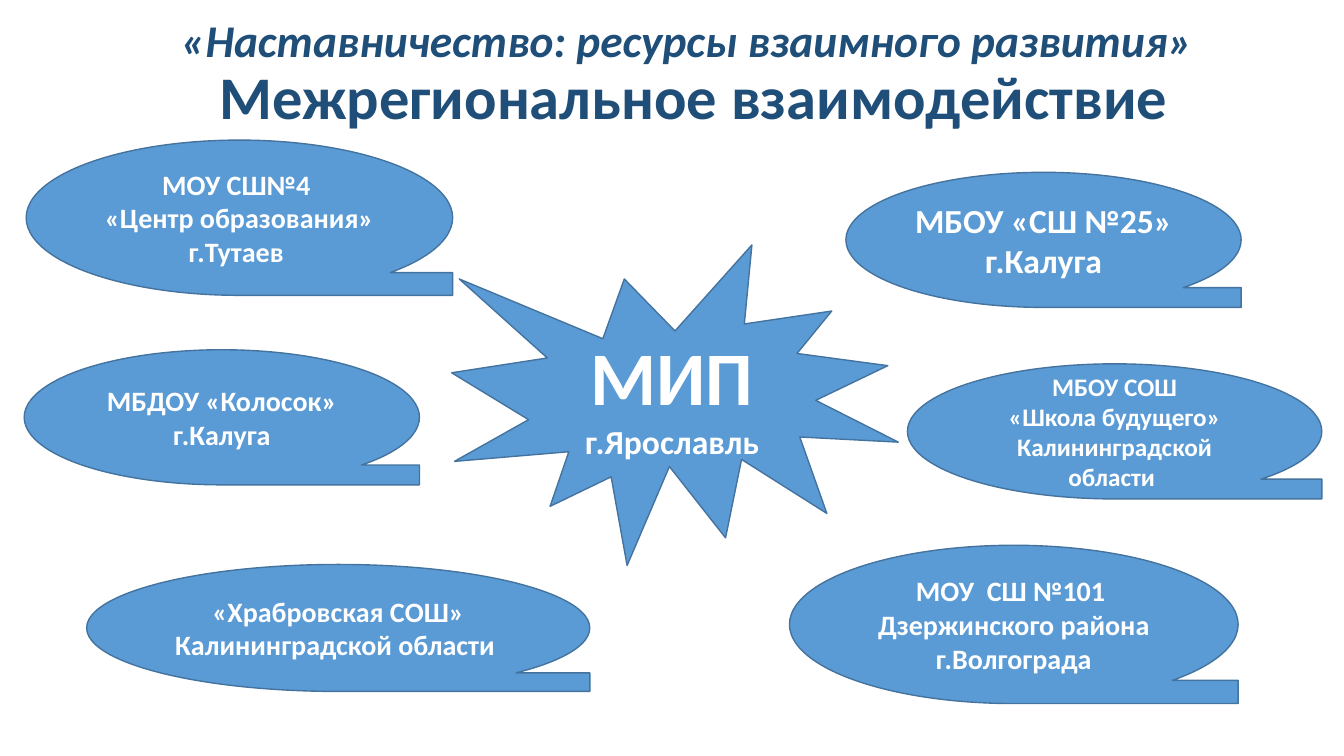
from dataclasses import dataclass

from pptx import Presentation
from pptx import util as u
from pptx.dml.color import RGBColor
from pptx.enum import shapes, text


@dataclass(frozen=True)
class Theme:
    font: str = "Calibri"
    title: str = "1F4E79"
    fill: str = "5B9BD5"
    line: str = "43739E"
    light: str = "FFFFFF"
    motto: float = 32.4
    heading: float = 43.2
    hub: int = 54
    large: int = 24
    normal: int = 20
    small: int = 18


class Deck:
    """Draws styled elements on the current slide, measured in px at 100 to the inch."""

    PX = 9144

    def __init__(self, theme, width, height):
        self.theme = theme
        self.prs = Presentation()
        self.prs.slide_width, self.prs.slide_height = self.emu(width, height)
        self.s = self.prs.slides.add_slide(self.prs.slide_layouts[6])

    def emu(self, *lengths):
        return [u.Emu(n * self.PX) for n in lengths]

    def set_lines(self, sp, lines, sizes, color, spacing=1.0):
        tf = sp.text_frame
        tf.text = "\n".join(lines)
        tf.word_wrap = True
        tf.vertical_anchor = text.MSO_ANCHOR.MIDDLE
        for p, size in zip(tf.paragraphs, sizes):
            p.alignment = text.PP_ALIGN.CENTER
            p.line_spacing = spacing
            for r in p.runs:
                r.font.name = self.theme.font
                r.font.size = u.Pt(size)
                r.font.bold = True
                r.font.color.rgb = RGBColor.from_string(color)
        return tf

    def title(self, box, motto, heading):
        sp = self.s.shapes.add_textbox(*self.emu(*box))
        sizes = (self.theme.motto, self.theme.heading)
        tf = self.set_lines(sp, (motto, heading), sizes, self.theme.title, 0.9)
        tf.paragraphs[0].runs[0].font.italic = True

    def shape(self, kind, box, lines, sizes):
        sp = self.s.shapes.add_shape(kind, *self.emu(*box))
        sp.shadow.inherit = False
        sp.fill.solid()
        sp.fill.fore_color.rgb = RGBColor.from_string(self.theme.fill)
        sp.line.color.rgb = RGBColor.from_string(self.theme.line)
        sp.line.width = u.Pt(1)
        self.set_lines(sp, lines, sizes, self.theme.light)

    def hub(self, box, name, city):
        kind = shapes.MSO_SHAPE.EXPLOSION1
        self.shape(kind, box, (name, city), (self.theme.hub, self.theme.large))

    def partner(self, box, size, *lines):
        kind = shapes.MSO_SHAPE.FLOWCHART_SEQUENTIAL_ACCESS_STORAGE
        self.shape(kind, box, lines, [size] * len(lines))


def main():
    theme = Theme()
    deck = Deck(theme, 1333, 750)
    deck.title((30, 2, 1303, 145), "«Наставничество: ресурсы взаимного развития»",
               " Межрегиональное взаимодействие")
    deck.hub((448, 243, 443, 318), "МИП", "г.Ярославль")
    partners = [
        ((26, 139, 423, 154), theme.normal,
         "МОУ СШ№4 ", "«Центр образования»", "г.Тутаев "),
        ((783, 541, 445, 157), theme.normal,
         "МОУ  СШ №101 ", "Дзержинского района", "г.Волгограда"),
        ((86, 560, 499, 126), theme.normal,
         "«Храбровская СОШ»", "Калининградской области "),
        ((839, 171, 392, 134), theme.large, "МБОУ «СШ №25» ", "г.Калуга"),
        ((900, 361, 411, 134), theme.small,
         "МБОУ СОШ", "«Школа будущего»", "Калининградской области "),
        ((24, 347, 392, 134), theme.normal, "МБДОУ «Колосок»", "г.Калуга"),
    ]
    for partner in partners:
        deck.partner(*partner)
    deck.prs.save("out.pptx")


if __name__ == "__main__":
    main()
